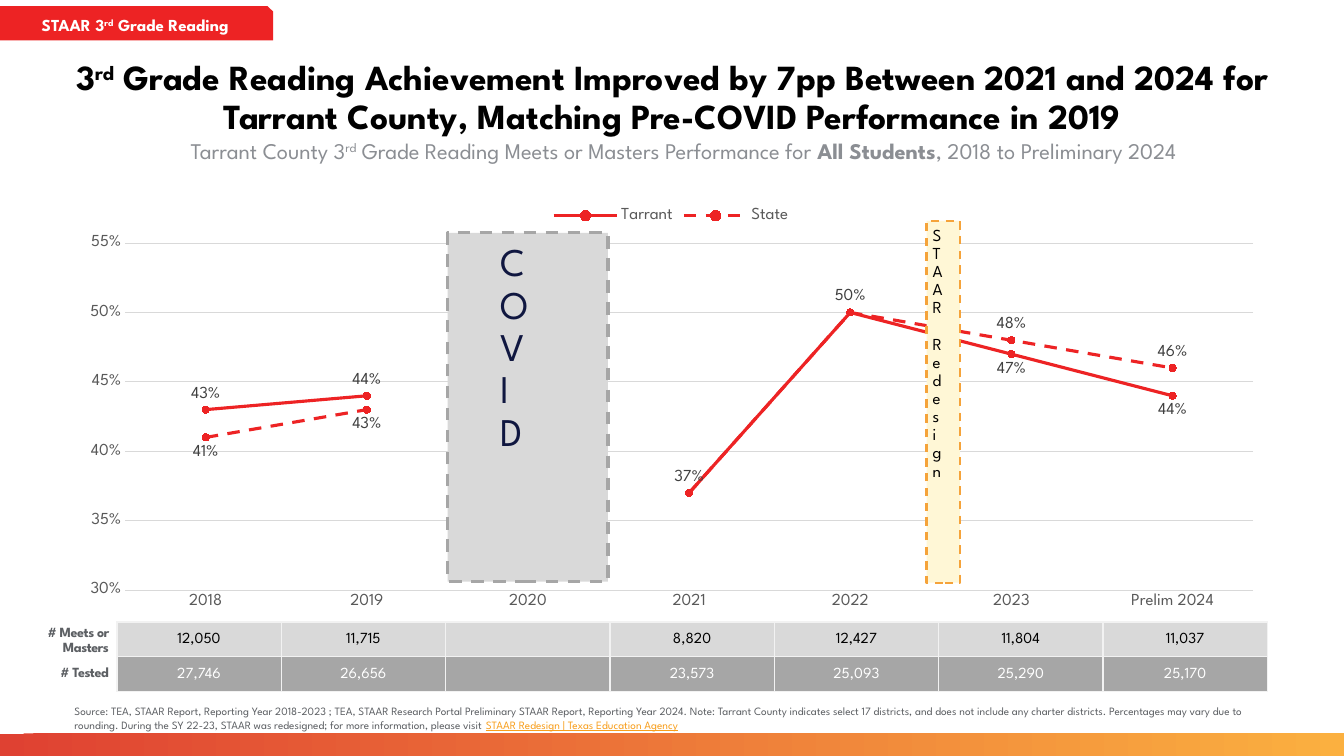
from lxml import etree
from pptx import Presentation
from pptx.chart.data import CategoryChartData
from pptx.dml.color import RGBColor
from pptx.enum.chart import XL_CHART_TYPE as CHART, XL_LABEL_POSITION as LABEL
from pptx.enum.chart import XL_LEGEND_POSITION as LEGEND, XL_MARKER_STYLE as MARKER
from pptx.enum.chart import XL_TICK_MARK as TICK
from pptx.enum.dml import MSO_LINE
from pptx.enum.shapes import MSO_SHAPE
from pptx.enum.text import MSO_ANCHOR, MSO_AUTO_SIZE, PP_ALIGN
from pptx.oxml.ns import qn
from pptx.util import Inches, Pt

FONT = "League Spartan"
BLACK = RGBColor(0x00, 0x00, 0x00)
WHITE = RGBColor(0xFF, 0xFF, 0xFF)
RED = RGBColor(0xED, 0x23, 0x24)
NAVY = RGBColor(0x10, 0x17, 0x40)
SLATE = RGBColor(0x5C, 0x5F, 0x63)
SUBTITLE_GREY = RGBColor(0x8B, 0x8E, 0x93)
AXIS_GREY = RGBColor(0x59, 0x59, 0x59)
LABEL_GREY = RGBColor(0x40, 0x40, 0x40)
LIGHT_GREY = RGBColor(0xD9, 0xD9, 0xD9)
MID_GREY = RGBColor(0xA6, 0xA6, 0xA6)
CREAM = RGBColor(0xFF, 0xF7, 0xD6)
ORANGE = RGBColor(0xF5, 0xA3, 0x3A)
LINK_ORANGE = RGBColor(0xF8, 0x9E, 0x1B)
BAND_START = RGBColor(0xDF, 0x41, 0x32)
BAND_END = RGBColor(0xFB, 0xB0, 0x40)

presentation = Presentation()
presentation.slide_width = Inches(13.33)
presentation.slide_height = Inches(7.5)
slide = presentation.slides.add_slide(presentation.slide_layouts[1])
shapes = slide.shapes


def area(left, top, width, height):
    """Turn percentages of the slide into left, top, width and height."""
    across, down = presentation.slide_width / 100, presentation.slide_height / 100
    return [int(left * across), int(top * down), int(width * across), int(height * down)]


def write_text(frame, *pieces, size, color, align=PP_ALIGN.LEFT, bold=False, spacing=0.9,
               margin=0.06, anchor=MSO_ANCHOR.MIDDLE, fit=MSO_AUTO_SIZE.NONE,
               tracking=0, direction="horz"):
    """Fill a frame with one paragraph; a piece is text or (text, run changes)."""
    frame.word_wrap = True
    frame.auto_size = fit
    frame.vertical_anchor = anchor
    frame.margin_left = frame.margin_right = Inches(margin)
    frame.margin_top = frame.margin_bottom = Inches(min(margin, 0.06))
    frame._txBody.bodyPr.set("vert", direction)
    paragraph = frame.paragraphs[0]
    paragraph.alignment = align
    paragraph.line_spacing = spacing
    paragraph.space_before = Pt(0)
    for piece in pieces:
        text, changes = (piece, {}) if isinstance(piece, str) else piece
        run = paragraph.add_run()
        run.text = text
        run.font.name = FONT
        run.font.size = Pt(size)
        run.font.bold = changes.get("bold", bold)
        run.font.underline = changes.get("underline", False)
        run.font.color.rgb = changes.get("color", color)
        properties = run._r.get_or_add_rPr()
        properties.set("baseline", str(changes.get("baseline", 0)))
        properties.set("spc", str(tracking))


ORDINAL = ("rd", {"baseline": 30000})

# Bottom band
band = shapes.add_shape(MSO_SHAPE.RECTANGLE, *area(0, 97.07, 100, 2.93))
band.shadow.inherit = False
band.line.fill.background()
band.fill.gradient()
band.fill.gradient_angle = 1
for stop, color in zip(band.fill.gradient_stops, (BAND_START, BAND_END)):
    stop.color.rgb = color

# Title and subtitle
title, subtitle = shapes.title, slide.placeholders[1]
for placeholder, place in ((title, (4.88, 8, 90.32, 12)), (subtitle, (4.8, 18.53, 90.25, 5.07))):
    (placeholder.left, placeholder.top,
     placeholder.width, placeholder.height) = area(*place)
write_text(title.text_frame, "3", ORDINAL,
           " Grade Reading Achievement Improved by 7pp Between 2021 and 2024 for Tarrant County, "
           "Matching Pre-COVID Performance in 2019",
           size=25.2, color=BLACK, bold=True, align=PP_ALIGN.CENTER, margin=0, anchor=MSO_ANCHOR.TOP)
bullet_format = subtitle.text_frame.paragraphs[0]._p.get_or_add_pPr()
bullet_format.set("marL", str(Inches(0.5)))
bullet_format.set("indent", str(Inches(-0.25)))
etree.SubElement(bullet_format, qn("a:buNone"))
write_text(subtitle.text_frame, "Tarrant County 3", ORDINAL,
           " Grade Reading Meets or Masters Performance for ", ("All Students", {"bold": True}),
           ", 2018 to Preliminary 2024",
           size=16, color=SUBTITLE_GREY, align=PP_ALIGN.CENTER, margin=0, anchor=MSO_ANCHOR.TOP)

# Line chart
UP, DOWN = LABEL.ABOVE, LABEL.BELOW
series_rows = [
    ("Tarrant", (0.43, 0.44, None, 0.37, 0.5, 0.47, 0.44),
     (UP, UP, None, UP, UP, DOWN, DOWN), MSO_LINE.SOLID),
    ("State", (0.41, 0.43, None, 0.37, 0.5, 0.48, 0.46),
     (DOWN, DOWN, None, None, None, UP, UP), MSO_LINE.DASH),
]
chart_data = CategoryChartData(number_format="0%")
chart_data.categories = ["2018", "2019", "2020", "2021", "2022", "2023", "Prelim 2024"]
for name, values, positions, dash in series_rows:
    chart_data.add_series(name, values)
chart = shapes.add_chart(CHART.LINE_MARKERS, *area(4.8, 26, 90.25, 56), chart_data).chart
chart.has_title = False
chart.has_legend = True
chart.legend.position = LEGEND.TOP
chart.legend.include_in_layout = False
chart.font.name = FONT
chart.font.size = Pt(10)
years, rates = chart.category_axis, chart.value_axis
for part in (chart.legend, years.tick_labels, rates.tick_labels):
    part.font.name = FONT
    part.font.size = Pt(12)
    part.font.color.rgb = AXIS_GREY
for axis in (years, rates):
    axis.major_tick_mark = axis.minor_tick_mark = TICK.NONE
rates.minimum_scale, rates.maximum_scale, rates.major_unit = 0.3, 0.55, 0.05
rates.tick_labels.number_format = "0%"
rates.tick_labels.number_format_is_linked = False
rates.format.line.fill.background()
for line in (years.format.line, rates.major_gridlines.format.line):
    line.color.rgb = LIGHT_GREY
    line.width = Pt(0.75)

plot_area = chart._chartSpace.chart.plotArea
for layout in plot_area.findall(qn("c:layout")):
    plot_area.remove(layout)
layout = etree.Element(qn("c:layout"))
plot_area.insert(0, layout)
manual = etree.SubElement(layout, qn("c:manualLayout"))
for tag, value in (("layoutTarget", "inner"), ("xMode", "edge"), ("yMode", "edge"),
                   ("x", "0.05"), ("y", "0.11"), ("w", "0.93"), ("h", "0.82")):
    etree.SubElement(manual, qn("c:" + tag)).set("val", value)

chart.plots[0].vary_by_categories = False
for series, (name, values, positions, dash) in zip(chart.plots[0].series, series_rows):
    series.smooth = False
    series.format.line.color.rgb = RED
    series.format.line.width = Pt(2.25)
    series.format.line.dash_style = dash
    series.marker.style = MARKER.CIRCLE
    series.marker.size = 5
    series.marker.format.fill.solid()
    series.marker.format.fill.fore_color.rgb = RED
    series.marker.format.line.color.rgb = RED
    series.data_labels.show_value = False
    for index, position in enumerate(positions):
        if position is not None:
            label = series.points[index].data_label
            label.font.name = FONT
            label.font.size = Pt(12)
            label.font.color.rgb = LABEL_GREY
            label.position = position

# Table of counts
table_rows = [
    (("12,050", "11,715", "", "8,820", "12,427", "11,804", "11,037"), LIGHT_GREY, BLACK),
    (("27,746", "26,656", "", "23,573", "25,093", "25,290", "25,170"), MID_GREY, WHITE),
]
table = shapes.add_table(2, 7, *area(8.7, 82.27, 85.6, 9.2)).table
for row, (counts, fill, color) in enumerate(table_rows):
    for column, count in enumerate(counts):
        cell = table.cell(row, column)
        cell.margin_left = cell.margin_right = cell.margin_top = Inches(0.01)
        cell.margin_bottom = 0
        cell.vertical_anchor = MSO_ANCHOR.MIDDLE
        for side in ("lnL", "lnR", "lnT", "lnB"):
            border = etree.SubElement(cell._tc.get_or_add_tcPr(), qn("a:" + side), w=str(Pt(1)))
            border_fill = etree.SubElement(border, qn("a:solidFill"))
            etree.SubElement(border_fill, qn("a:srgbClr"), val="F2F2F2")
        cell.fill.solid()
        cell.fill.fore_color.rgb = fill
        paragraph = cell.text_frame.paragraphs[0]
        paragraph.alignment = PP_ALIGN.CENTER
        if count:
            run = paragraph.add_run()
            run.text = count
            run.font.name, run.font.size = FONT, Pt(11)
            run.font.color.rgb = color

# Section tag and the two period markers
covid = shapes.add_group_shape()
panels = []
for owner, kind, place, fill, border, width in (
        (shapes, MSO_SHAPE.SNIP_1_RECTANGLE, (0, 0.8, 20.33, 4.53), RED, None, 0),
        (covid.shapes, MSO_SHAPE.RECTANGLE, (33.31, 30.8, 11.93, 46.13), LIGHT_GREY, MID_GREY, 2.25),
        (shapes, MSO_SHAPE.RECTANGLE, (68.94, 29.2, 2.48, 47.87), CREAM, ORANGE, 1.5)):
    panel = owner.add_shape(kind, *area(*place))
    panel.shadow.inherit = False
    panel.fill.solid()
    panel.fill.fore_color.rgb = fill
    if border is None:
        panel.line.fill.background()
    else:
        panel.line.color.rgb = border
        panel.line.width = Pt(width)
        panel.line.dash_style = MSO_LINE.DASH
    panels.append(panel)
tag, covid_panel, redesign_panel = panels
write_text(tag.text_frame, "STAAR 3", ORDINAL, " Grade Reading",
           size=12, color=WHITE, bold=True, align=PP_ALIGN.CENTER, spacing=1)
covid_text = covid.shapes.add_textbox(*area(36.83, 31.33, 4.88, 45.6))
for shape, text, size, color in ((covid_text, "COVID", 28, NAVY),
                                 (redesign_panel, "STAAR Redesign", 12, BLACK)):
    write_text(shape.text_frame, text, size=size, color=color, tracking=-30,
               direction="wordArtVert", fit=MSO_AUTO_SIZE.SHAPE_TO_FIT_TEXT)

# Row labels and source note
for text, top, height in (("# Meets or Masters", 81.87, 5.6), ("# Tested", 87.33, 3.47)):
    row_label = shapes.add_textbox(*area(2.4, top, 6.15, height))
    write_text(row_label.text_frame, text, size=10, color=SLATE, bold=True,
               align=PP_ALIGN.RIGHT, tracking=-30)
source = shapes.add_textbox(*area(4.8, 92.4, 90.25, 4.27))
write_text(source.text_frame,
           "Source: TEA, STAAR Report, Reporting Year 2018-2023 ; TEA, STAAR Research Portal "
           "Preliminary STAAR Report, Reporting Year 2024. Note: Tarrant County indicates select 17 "
           "districts, and does not include any charter districts. Percentages may vary due to "
           "rounding. During the SY 22-23, STAAR was redesigned; for more information, please visit ",
           ("STAAR Redesign | Texas Education Agency", {"color": LINK_ORANGE, "underline": True}),
           size=8, color=SLATE, spacing=1, margin=0.1, anchor=MSO_ANCHOR.TOP)

presentation.save("out.pptx")
